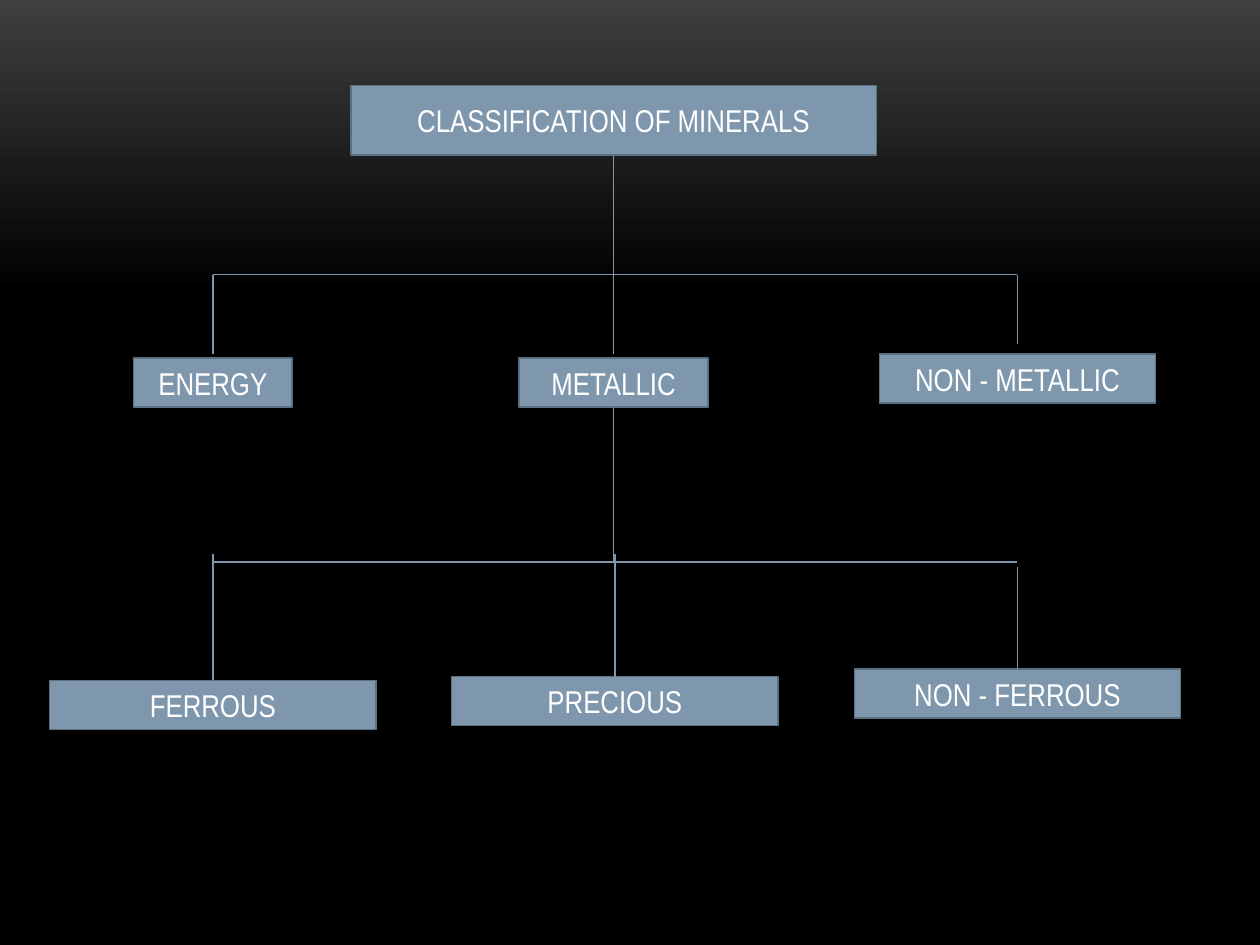
from copy import deepcopy

from lxml import etree
from pptx import Presentation
from pptx import util as u
from pptx.dml import color
from pptx.enum import shapes, text
from pptx.oxml import ns

WIDTH, HEIGHT = u.Inches(10), u.Inches(7.5)
COLUMNS, ROWS = 100, 75
LEFT, MIDDLE, RIGHT = 16.9, 48.7, 80.75
UPPER_BAR, LOWER_BAR = 21.8, 44.6
STEEL, EDGE, WHITE = "7E97AD", "5D7080", "FFFFFF"


def rgb(value):
    """Return the colour for a hex string."""
    return color.RGBColor.from_string(value)


def x(column):
    """Return the length of a number of grid columns."""
    return round(WIDTH * column / COLUMNS)


def y(row):
    """Return the length of a number of grid rows."""
    return round(HEIGHT * row / ROWS)


def paint_background(page):
    """Fade the page from dark grey at the top to black."""
    fill = page.background.fill
    fill.gradient()
    fill.gradient_angle = 270
    stop_list = page.element.find(".//" + ns.qn("a:gsLst"))
    stop_list.append(deepcopy(stop_list[-1]))
    stops = ((0, "3F3F3F"), (0.31, "000000"), (1, "000000"))
    for stop, (position, value) in zip(fill.gradient_stops, stops):
        stop.position = position
        stop.color.rgb = rgb(value)


def add_box(page, label, center, top, width, height=3.9):
    """Add a labelled rectangle centred on a column."""
    box = page.shapes.add_shape(
        shapes.MSO_SHAPE.RECTANGLE,
        x(center - width / 2), y(top), x(width), y(height))
    box.shadow.inherit = False
    box.fill.solid()
    box.fill.fore_color.rgb = rgb(STEEL)
    box.line.color.rgb = rgb(EDGE)
    box.line.width = u.Pt(0.85)
    frame = box.text_frame
    frame.word_wrap = True
    frame.vertical_anchor = text.MSO_ANCHOR.MIDDLE
    para = frame.paragraphs[0]
    para.alignment = text.PP_ALIGN.CENTER
    span = para.add_run()
    span.text = label
    span.font.name = "Arial Narrow"
    span.font.size = u.Pt(18)
    span.font.color.rgb = rgb(WHITE)
    return box


def add_line(page, start, end, source=None, target=None):
    """Add a thin line, joined to a source's bottom or a target's top."""
    line = page.shapes.add_connector(
        shapes.MSO_CONNECTOR.STRAIGHT,
        x(start[0]), y(start[1]), x(end[0]), y(end[1]))
    line.line.color.rgb = rgb(STEEL)
    line.line.width = u.Pt(0.75)
    etree.SubElement(line.element.spPr, ns.qn("a:effectLst"))
    if source:
        line.begin_connect(source, 2)
    if target:
        line.end_connect(target, 0)


def add_upper_level(page):
    """Add the title and its three mineral groups, returning the middle one."""
    title = add_box(page, "CLASSIFICATION OF MINERALS", MIDDLE, 6.8, 41.7, 5.5)
    hub = (MIDDLE, UPPER_BAR)
    add_line(page, (MIDDLE, 12.3), hub, source=title)
    for center in (LEFT, RIGHT):
        add_line(page, hub, (center, UPPER_BAR))
    for center, bottom in ((LEFT, 28.1), (MIDDLE, 28.1), (RIGHT, 27.3)):
        add_line(page, (center, UPPER_BAR), (center, bottom))
    add_box(page, "ENERGY", LEFT, 28.4, 12.6)
    add_box(page, "NON - METALLIC", RIGHT, 28.1, 21.9)
    return add_box(page, "METALLIC", MIDDLE, 28.4, 15)


def add_lower_level(page, metallic):
    """Add the three kinds of metallic mineral."""
    add_line(page, (MIDDLE, 32.3), (MIDDLE, LOWER_BAR), source=metallic)
    add_line(page, (LEFT, LOWER_BAR), (RIGHT, LOWER_BAR))
    kinds = (
        ("FERROUS", LEFT, 54, 44),
        ("PRECIOUS", MIDDLE + 0.1, 53.7, 44),
        ("NON - FERROUS", RIGHT, 53.1, 45),
    )
    for label, center, top, start in kinds:
        box = add_box(page, label, center, top, 25.9)
        add_line(page, (center, start), (center, top), target=box)


def main():
    """Build and save the mineral classification slide."""
    deck = Presentation()
    deck.slide_width, deck.slide_height = WIDTH, HEIGHT
    page = deck.slides.add_slide(deck.slide_layouts[6])
    paint_background(page)
    metallic = add_upper_level(page)
    add_lower_level(page, metallic)
    deck.save("out.pptx")


if __name__ == "__main__":
    main()
